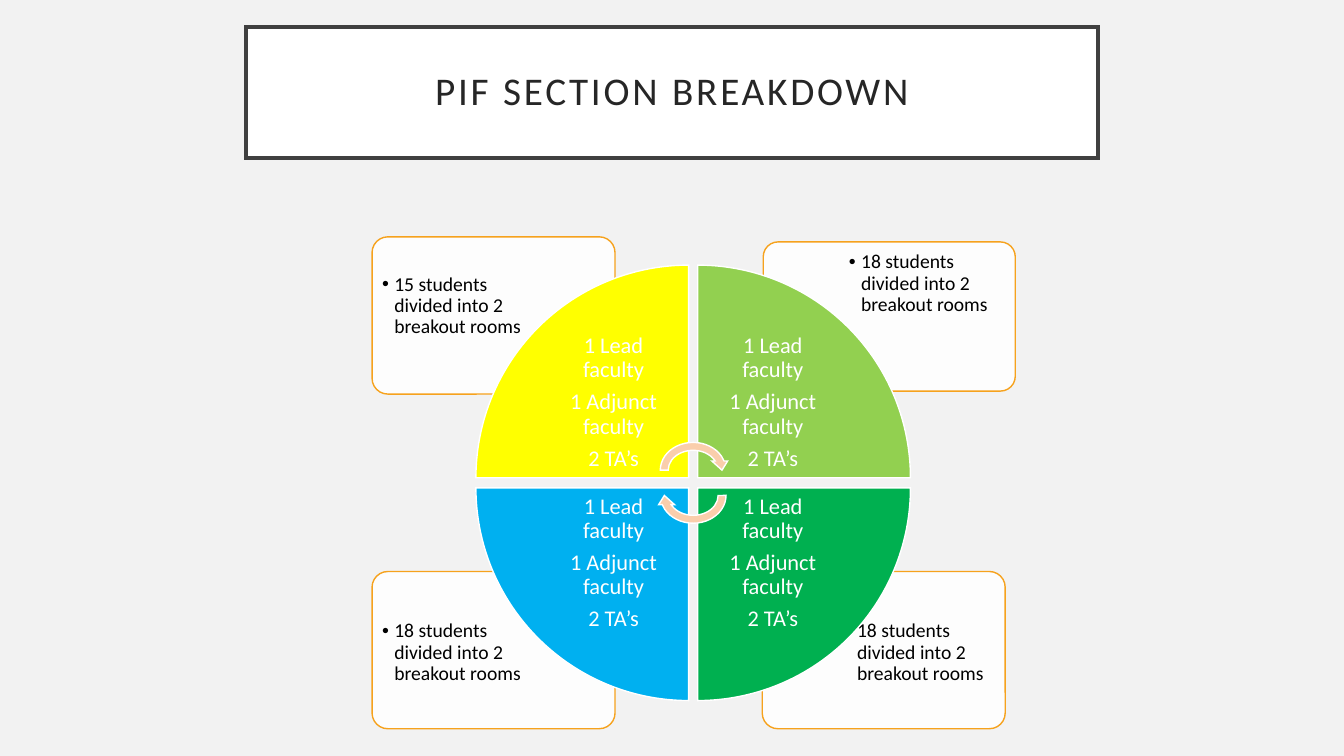
from dataclasses import dataclass

from lxml.etree import SubElement
from pptx import Presentation
from pptx.dml.color import RGBColor
from pptx.enum.shapes import MSO_SHAPE
from pptx.enum.text import MSO_ANCHOR, PP_ALIGN
from pptx.oxml.ns import qn
from pptx.shapes.autoshape import Shape
from pptx.slide import Slide
from pptx.text.text import TextFrame, _Paragraph
from pptx.util import Pt

EMU_PER_PX = 9144  # 100 px to the inch
FONT = "Calibri"
WHITE = "FFFFFF"
CARD_LINE = "F6A21D"
ARROW_FILL = "FACEAC"

WEDGE_SIZE = 211
WEDGE_TEXT_SIZE = 149
WEDGE_TEXT_INSET = 16  # narrow enough to wrap "1 Lead faculty" clear of the arrows
WEDGE_LEFT, WEDGE_RIGHT = 472, 692
WEDGE_TOP, WEDGE_BOTTOM = 263, 484
STAFF = ("1 Lead faculty", "1 Adjunct faculty", "2 TA’s")


@dataclass(frozen=True)
class Box:
    left: int
    top: int
    width: int
    height: int

    def emu(self) -> tuple[int, int, int, int]:
        return (self.left * EMU_PER_PX, self.top * EMU_PER_PX,
                self.width * EMU_PER_PX, self.height * EMU_PER_PX)


@dataclass(frozen=True)
class StudentCard:
    frame: Box
    text_box: Box
    students: int


@dataclass(frozen=True)
class Wedge:
    left: int
    top: int
    rotation: int
    fill: str


CARDS = (
    StudentCard(Box(756, 567, 241, 156), Box(831, 609, 162, 110), 18),
    StudentCard(Box(369, 567, 241, 156), Box(372, 609, 162, 110), 18),
    StudentCard(Box(757, 240, 250, 148), Box(835, 243, 168, 104), 18),
    StudentCard(Box(369, 235, 241, 156), Box(372, 265, 162, 84), 15),
)

WEDGES = (
    Wedge(WEDGE_LEFT, WEDGE_TOP, 0, "FFFF00"),
    Wedge(WEDGE_RIGHT, WEDGE_TOP, 90, "92D050"),
    Wedge(WEDGE_RIGHT, WEDGE_BOTTOM, 180, "00B050"),
    Wedge(WEDGE_LEFT, WEDGE_BOTTOM, 270, "00B0F0"),
)


def color(hex_code: str) -> RGBColor:
    return RGBColor.from_string(hex_code)


def add_filled_shape(slide: Slide, kind: MSO_SHAPE, box: Box, fill: str, line: str,
                     line_width: float = 1, rotation: int = 0) -> Shape:
    shape = slide.shapes.add_shape(kind, *box.emu())
    shape.shadow.inherit = False
    shape.fill.solid()
    shape.fill.fore_color.rgb = color(fill)
    shape.line.color.rgb = color(line)
    shape.line.width = Pt(line_width)
    SubElement(shape.line._get_or_add_ln(), qn("a:miter"), lim="800000")
    shape.rotation = rotation
    return shape


def set_opacity(shape: Shape, percent: int) -> None:
    fill_color = shape.fill._xPr.find(qn("a:solidFill"))[0]
    SubElement(fill_color, qn("a:alpha"), val=str(percent * 1000))


def prepare_frame(frame: TextFrame, inset: int, anchor: MSO_ANCHOR) -> None:
    frame.word_wrap = True
    frame.vertical_anchor = anchor
    frame.margin_left = frame.margin_right = inset * EMU_PER_PX
    frame.margin_top = frame.margin_bottom = inset * EMU_PER_PX


def add_text_box(slide: Slide, box: Box, inset: int, anchor: MSO_ANCHOR) -> TextFrame:
    frame = slide.shapes.add_textbox(*box.emu()).text_frame
    prepare_frame(frame, inset, anchor)
    return frame


def write_run(paragraph: _Paragraph, text: str, size: int, hex_code: str,
              align: PP_ALIGN = PP_ALIGN.CENTER, letter_spacing: int = 0) -> None:
    paragraph.alignment = align
    paragraph.line_spacing = 0.9
    run = paragraph.add_run()
    run.text = text
    run.font.name = FONT
    run.font.size = Pt(size)
    run.font.color.rgb = color(hex_code)
    if letter_spacing:
        run.font._element.set("spc", str(letter_spacing * 100))


def add_bullet(paragraph: _Paragraph, indent: int) -> None:
    properties = paragraph._p.get_or_add_pPr()
    properties.set("marL", str(indent * EMU_PER_PX))
    properties.set("indent", str(-indent * EMU_PER_PX))
    SubElement(properties, qn("a:buFont"), typeface="Arial")
    SubElement(properties, qn("a:buChar"), char="•")


def add_title(slide: Slide) -> None:
    shape = add_filled_shape(slide, MSO_SHAPE.RECTANGLE, Box(244, 27, 845, 130),
                             WHITE, "404040", line_width=2.5)
    prepare_frame(shape.text_frame, 20, MSO_ANCHOR.MIDDLE)
    write_run(shape.text_frame.paragraphs[0], "PIF SECTION BREAKDOWN", 28, "262626",
              letter_spacing=2)


def add_card(slide: Slide, card: StudentCard) -> None:
    shape = add_filled_shape(slide, MSO_SHAPE.ROUNDED_RECTANGLE, card.frame,
                             WHITE, CARD_LINE)
    shape.adjustments[0] = 0.1
    set_opacity(shape, 90)
    frame = add_text_box(slide, card.text_box, 7, MSO_ANCHOR.TOP)
    paragraph = frame.paragraphs[0]
    write_run(paragraph, f"{card.students} students divided into 2 breakout rooms",
              14, "000000", PP_ALIGN.LEFT)
    add_bullet(paragraph, 12)


def add_wedge(slide: Slide, wedge: Wedge) -> None:
    """Draw a quarter of the circle, with its text box against the centre."""
    add_filled_shape(slide, MSO_SHAPE.PIE_WEDGE,
                     Box(wedge.left, wedge.top, WEDGE_SIZE, WEDGE_SIZE),
                     wedge.fill, WHITE, rotation=wedge.rotation)
    offset = WEDGE_SIZE - WEDGE_TEXT_SIZE
    left = wedge.left + (offset if wedge.left == WEDGE_LEFT else 0)
    top = wedge.top + (offset if wedge.top == WEDGE_TOP else 0)
    frame = add_text_box(slide, Box(left, top, WEDGE_TEXT_SIZE, WEDGE_TEXT_SIZE),
                         WEDGE_TEXT_INSET, MSO_ANCHOR.MIDDLE)
    for index, text in enumerate(STAFF):
        paragraph = frame.add_paragraph() if index else frame.paragraphs[0]
        write_run(paragraph, text, 16, WHITE)
        paragraph.space_after = Pt(5.6)


def main() -> None:
    presentation = Presentation()
    presentation.slide_width = 1333 * EMU_PER_PX
    presentation.slide_height = 750 * EMU_PER_PX
    slide = presentation.slides.add_slide(presentation.slide_layouts[6])
    slide.background.fill.solid()
    slide.background.fill.fore_color.rgb = color("F2F2F2")

    add_title(slide)
    for card in CARDS:
        add_card(slide, card)
    for wedge in WEDGES:
        add_wedge(slide, wedge)
    for top, rotation in ((435, 0), (460, 180)):
        add_filled_shape(slide, MSO_SHAPE.CIRCULAR_ARROW, Box(651, top, 73, 63),
                         ARROW_FILL, WHITE, rotation=rotation)

    presentation.save("out.pptx")


if __name__ == "__main__":
    main()
